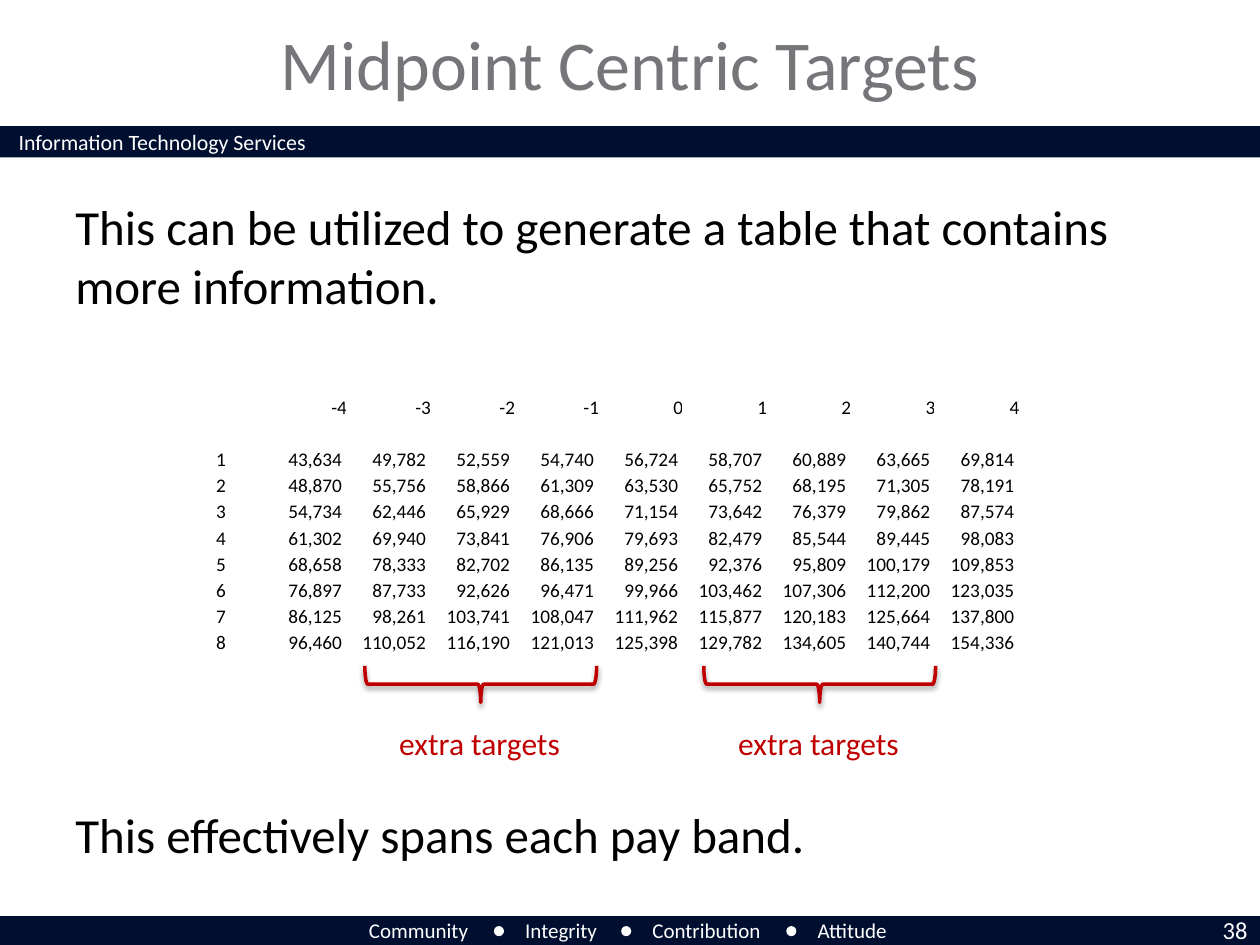
from lxml.etree import SubElement
from pptx import Presentation
from pptx.dml.color import RGBColor
from pptx.enum.shapes import MSO_SHAPE
from pptx.enum.text import MSO_ANCHOR, MSO_AUTO_SIZE, PP_ALIGN
from pptx.oxml.ns import qn
from pptx.util import Inches, Pt

# The slide is a grid of 100 columns by 75 rows; boxes are (left, top, width, height).
COLS, ROWS = 100, 75
UNIT = Inches(0.1)
NAVY, WHITE, GREY, BLACK, RED = "000E2F", "FFFFFF", "747679", "000000", "C00000"
FONT = "Calibri"

STEPS = range(-4, 5)
PAY = """
43,634 49,782 52,559 54,740 56,724 58,707 60,889 63,665 69,814
48,870 55,756 58,866 61,309 63,530 65,752 68,195 71,305 78,191
54,734 62,446 65,929 68,666 71,154 73,642 76,379 79,862 87,574
61,302 69,940 73,841 76,906 79,693 82,479 85,544 89,445 98,083
68,658 78,333 82,702 86,135 89,256 92,376 95,809 100,179 109,853
76,897 87,733 92,626 96,471 99,966 103,462 107,306 112,200 123,035
86,125 98,261 103,741 108,047 111,962 115,877 120,183 125,664 137,800
96,460 110,052 116,190 121,013 125,398 129,782 134,605 140,744 154,336
"""


def color(code):
    return RGBColor.from_string(code)


def scale(box):
    return [round(n * UNIT) for n in box]


def add_run(para, text, size, code):
    run = para.add_run()
    run.text = text
    run.font.name = FONT
    run.font.size = Pt(size)
    run.font.color.rgb = color(code)


def add_text(slide, box, lines, size, code, align=PP_ALIGN.LEFT, wrap=True,
             anchor=MSO_ANCHOR.TOP, gap=0):
    frame = slide.shapes.add_textbox(*scale(box)).text_frame
    frame.word_wrap = wrap
    frame.auto_size = MSO_AUTO_SIZE.NONE if wrap else MSO_AUTO_SIZE.SHAPE_TO_FIT_TEXT
    frame.vertical_anchor = anchor
    for i, line in enumerate(lines):
        para = frame.add_paragraph() if i else frame.paragraphs[0]
        para.alignment = align
        if i:
            para.space_before = Pt(gap)
        add_run(para, line, size, code)


def add_solid(slide, kind, box, code):
    shape = slide.shapes.add_shape(kind, *scale(box))
    shape.shadow.inherit = False
    shape.fill.solid()
    shape.fill.fore_color.rgb = color(code)
    shape.line.fill.background()


def add_header(slide, box):
    left, top, width, height = box
    add_solid(slide, MSO_SHAPE.RECTANGLE, (left, top + 10, width, 2.5), NAVY)
    add_text(slide, (left + 0.5, top + 9.7, 34, 3.2),
             ["Information Technology Services"], 12.5, WHITE)
    add_text(slide, (left + 10, top + 1, width - 20, 8), ["Midpoint Centric Targets"],
             40, GREY, PP_ALIGN.CENTER, anchor=MSO_ANCHOR.MIDDLE)


def add_footer(slide, box):
    left, top, width, height = box
    add_solid(slide, MSO_SHAPE.RECTANGLE, box, NAVY)
    words = [("Community", 28.3, 10), ("Integrity", 40.7, 8),
             ("Contribution", 50.8, 11), ("Attitude", 63.9, 7.8)]
    for i, (word, x, wide) in enumerate(words):
        add_text(slide, (left + x, top - 0.4, wide, 3), [word], 12, WHITE, wrap=False)
        if i:
            add_solid(slide, MSO_SHAPE.OVAL, (left + x - 1.5, top + 0.8, 0.8, 0.8), WHITE)
    add_text(slide, (left + width - 7.6, top - 0.6, 7.6, 3.4), ["38"], 14, WHITE,
             PP_ALIGN.RIGHT)


def add_body(slide, box):
    add_text(slide, box,
             ["This can be utilized to generate a table that contains more information.",
              "This effectively spans each pay band."], 28, BLACK, gap=280)


def add_pay(slide, box):
    """Table of pay by band (rows) and step from the midpoint (columns)."""
    bands = [line.split() for line in PAY.strip().splitlines()]
    rows = [["", *map(str, STEPS)], [""] * (len(STEPS) + 1)]
    rows += [[str(i), *band] for i, band in enumerate(bands, 1)]
    table = slide.shapes.add_table(len(rows), len(rows[0]), *scale(box)).table
    table.first_row = table.horz_banding = False
    for r, row in enumerate(rows):
        for c, text in enumerate(row):
            cell = table.cell(r, c)
            cell.fill.background()
            cell.vertical_anchor = MSO_ANCHOR.BOTTOM
            cell.margin_left = cell.margin_top = cell.margin_bottom = 0
            cell.margin_right = Inches(0.04) if r and c else 0
            para = cell.text_frame.paragraphs[0]
            para.alignment = PP_ALIGN.RIGHT if c else PP_ALIGN.CENTER
            if text:
                add_run(para, text, 11, BLACK)
            else:
                SubElement(para._p, qn("a:endParaRPr"), sz="1100")


def add_shadow(shape):
    effects = SubElement(shape._element.spPr, qn("a:effectLst"))
    outer = SubElement(effects, qn("a:outerShdw"), blurRad=str(Pt(3.1)),
                       dist=str(Pt(1.6)), dir="5400000", rotWithShape="0")
    tint = SubElement(outer, qn("a:srgbClr"), val=BLACK)
    SubElement(tint, qn("a:alpha"), val="38000")


def add_extra(slide, box):
    """Brace under three columns, with its label."""
    left, top, width, height = box
    deep = 2.9
    turn = (width - deep) / 2
    brace = slide.shapes.add_shape(
        MSO_SHAPE.RIGHT_BRACE, *scale((left + turn, top - turn, deep, width)))
    brace.rotation = 90
    brace.fill.background()
    brace.line.color.rgb = color(RED)
    brace.line.width = Pt(2)
    add_shadow(brace)
    add_text(slide, (left + 1.75, top + height - 4, 14.9, 4), ["extra targets"],
             18, RED, wrap=False)


def main():
    deck = Presentation()
    deck.slide_width, deck.slide_height = COLS * UNIT, ROWS * UNIT
    slide = deck.slides.add_slide(deck.slide_layouts[6])
    add_header(slide, (0, 0, COLS, 12.5))
    add_footer(slide, (0, 72.7, COLS, 2.5))
    add_body(slide, (5, 15.1, 90, 55))
    add_pay(slide, (14.2, 31.2, 66.7, 20.8))
    for left in (28.95, 55.85):
        add_extra(slide, (left, 52.85, 18.4, 8.1))
    deck.save("out.pptx")


if __name__ == "__main__":
    main()
